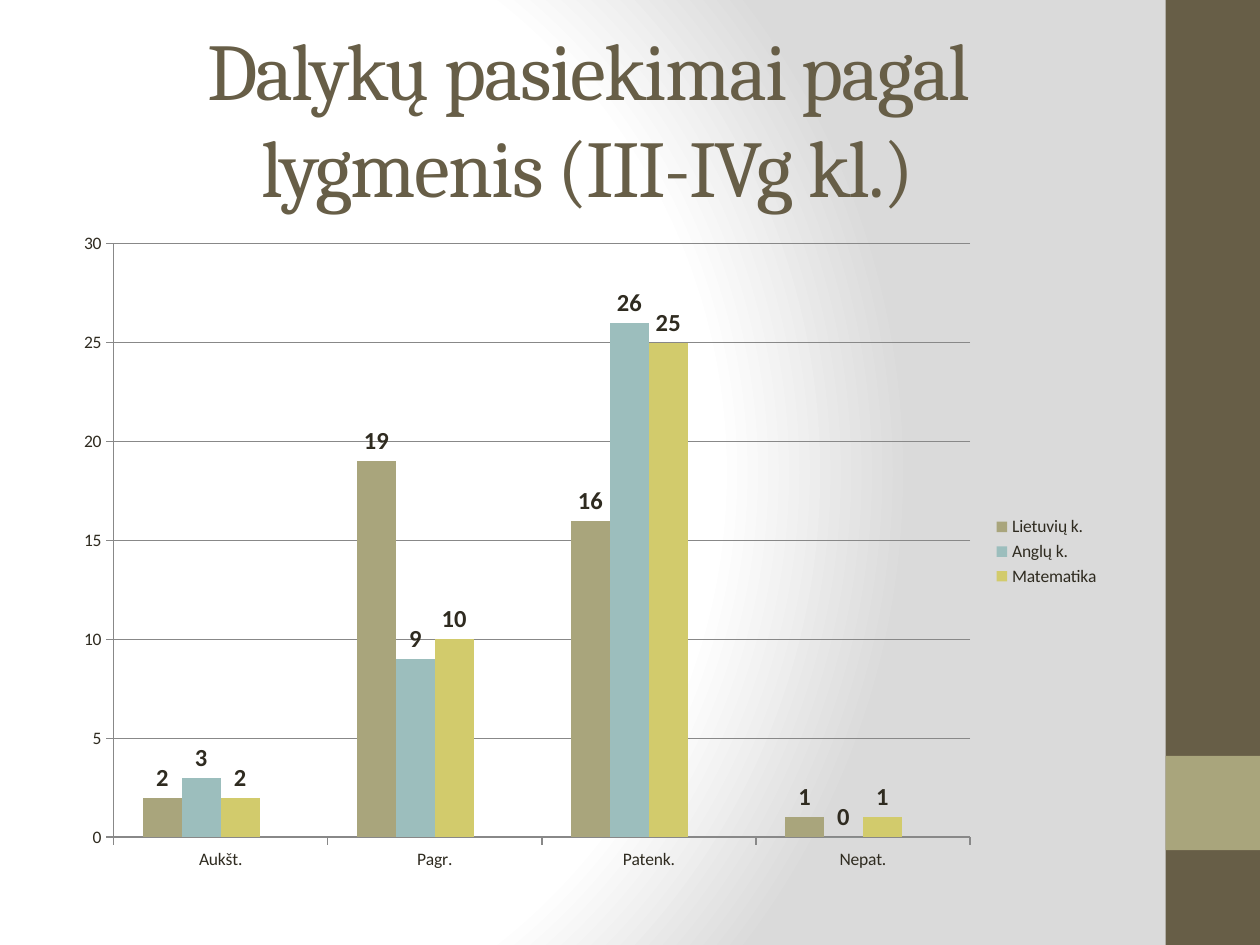
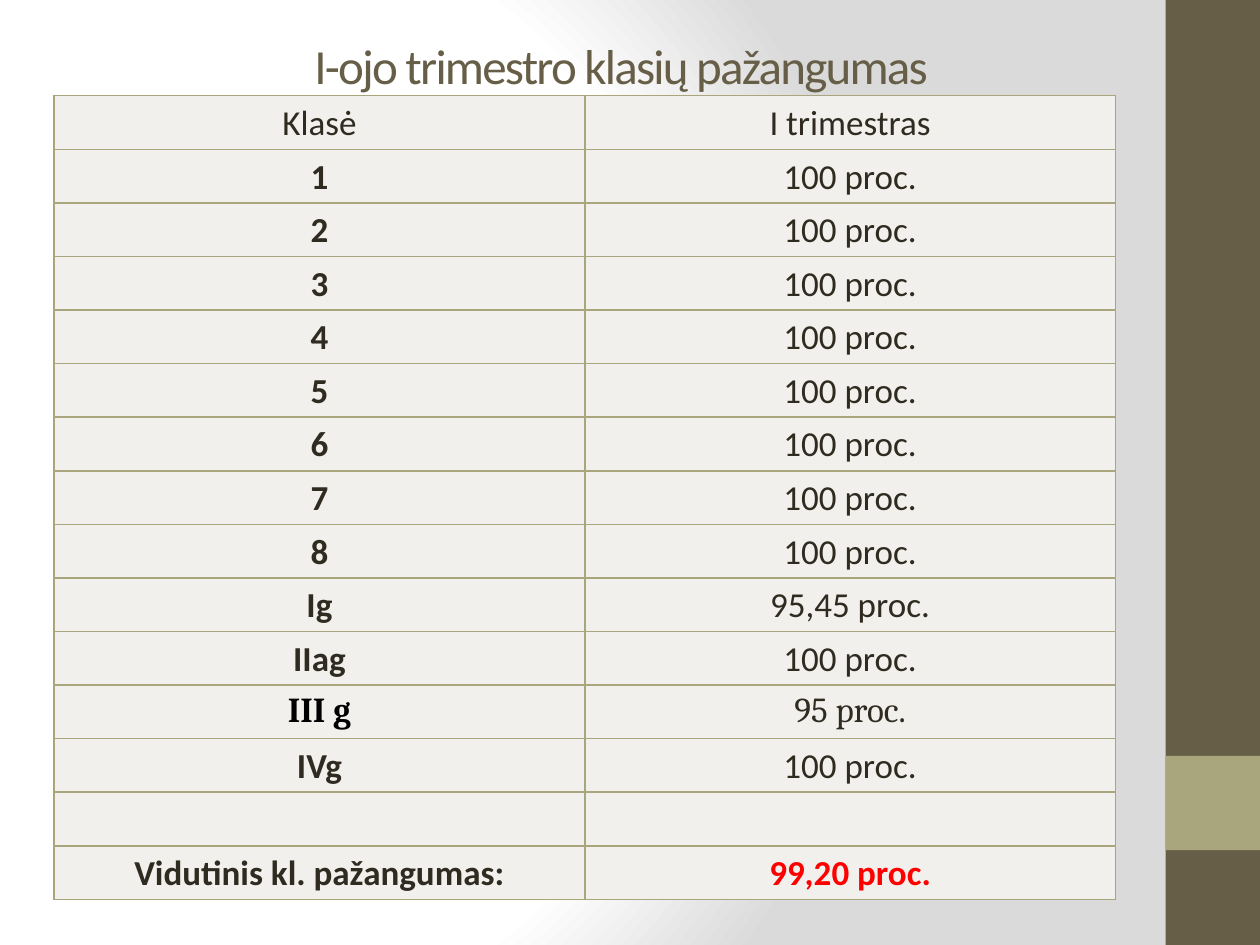
from dataclasses import dataclass

from pptx import Presentation
from pptx.chart.data import CategoryChartData
from pptx.dml.color import RGBColor
from pptx.enum.chart import XL_CHART_TYPE, XL_LABEL_POSITION, XL_LEGEND_POSITION, XL_TICK_MARK
from pptx.enum.shapes import MSO_SHAPE
from pptx.enum.text import MSO_ANCHOR, MSO_AUTO_SIZE, PP_ALIGN
from pptx.oxml import parse_xml
from pptx.oxml.ns import nsdecls, qn
from pptx.slide import Slide, SlideMaster
from pptx.table import _Cell
from pptx.util import Cm, Pt

COLUMNS = XL_CHART_TYPE.COLUMN_CLUSTERED
LABEL_ABOVE = XL_LABEL_POSITION.OUTSIDE_END
LEGEND_RIGHT = XL_LEGEND_POSITION.RIGHT
TICK_OUTSIDE = XL_TICK_MARK.OUTSIDE
RECTANGLE = MSO_SHAPE.RECTANGLE
MIDDLE = MSO_ANCHOR.MIDDLE
NO_AUTOFIT = MSO_AUTO_SIZE.NONE
CENTER = PP_ALIGN.CENTER

BROWN = RGBColor(0x67, 0x5E, 0x47)
OLIVE = RGBColor(0xA9, 0xA5, 0x7C)
TEAL = RGBColor(0x9C, 0xBE, 0xBD)
MUSTARD = RGBColor(0xD2, 0xCB, 0x6C)
SAGE = RGBColor(0x95, 0xA3, 0x9D)
INK = RGBColor(0x2F, 0x2B, 0x20)
BLACK = RGBColor(0x00, 0x00, 0x00)
RED = RGBColor(0xFF, 0x00, 0x00)
GRID_GREY = RGBColor(0x88, 0x88, 0x88)
CELL_FILL = RGBColor(0xF1, 0xF0, 0xEC)

SANS = "Calibri"
SERIF = "Cambria"
TITLE_ONLY = 5


@dataclass
class Box:
    left: float
    top: float
    width: float
    height: float

    def lengths(self) -> tuple[Cm, Cm, Cm, Cm]:
        return Cm(self.left), Cm(self.top), Cm(self.width), Cm(self.height)


@dataclass
class Band:
    box: Box
    color: RGBColor


@dataclass
class Subject:
    name: str
    values: list[int | None]
    color: RGBColor


@dataclass
class CellText:
    text: str
    bold: bool = False
    font: str = SANS
    color: RGBColor = INK


BANDS = [
    Band(Box(23.5, 0, 1.9, 19.05), BROWN),
    Band(Box(23.5, 15.24, 1.9, 1.9), OLIVE),
]

LEVELS = ["Aukšt.", "Pagr.", "Patenk.", "Nepat."]
SUBJECTS = [
    Subject("Lietuvių k.", [2, 19, 16, 1], OLIVE),
    Subject("Anglų k.", [3, 9, 26, 0], TEAL),
    Subject("Matematika", [2, 10, 25, 1], MUSTARD),
    Subject("Series 4", [None] * 4, SAGE),  # keeps the free slot in each group
]
UNLISTED_SUBJECT = 3

FULL = CellText("100 proc.")
PROGRESS = [
    (CellText("Klasė"), CellText("I trimestras")),
    *((CellText(str(number), bold=True), FULL) for number in range(1, 9)),
    (CellText("Ig", bold=True), CellText("95,45 proc.")),
    (CellText("IIag", bold=True), FULL),
    (CellText("III g", True, SERIF, BLACK), CellText("95 proc.", font=SERIF)),
    (CellText("IVg", bold=True), FULL),
    (CellText(""), CellText("")),
    (CellText("Vidutinis kl. pažangumas:", bold=True),
     CellText("99,20 proc.", bold=True, color=RED)),
]


# Shared look
def set_background(master: SlideMaster) -> None:
    master.background.fill.solid()
    solid = master.element.find(".//" + qn("p:bgPr")).find(qn("a:solidFill"))
    stops = "".join(
        f'<a:gs pos="{position}000"><a:srgbClr val="{color}"/></a:gs>'
        for position, color in ((0, "FFFFFF"), (75, "FFFFFF"), (100, "DADADA"))
    )
    gradient = parse_xml(
        f'<a:gradFill {nsdecls("a")} rotWithShape="1"><a:gsLst>{stops}</a:gsLst>'
        '<a:path path="circle"><a:fillToRect l="20000" t="50000" r="100000" b="50000"/>'
        "</a:path></a:gradFill>"
    )
    solid.getparent().replace(solid, gradient)


def add_page(deck: Presentation, title: str, box: Box, font: str, size: int) -> Slide:
    page = deck.slides.add_slide(deck.slide_layouts[TITLE_ONLY])
    for band in BANDS:
        shape = page.shapes.add_shape(RECTANGLE, *band.box.lengths())
        shape.shadow.inherit = False
        shape.fill.solid()
        shape.fill.fore_color.rgb = band.color
        shape.line.fill.background()

    heading = page.shapes.title
    heading.left, heading.top, heading.width, heading.height = box.lengths()
    frame = heading.text_frame
    frame.auto_size = NO_AUTOFIT
    frame.word_wrap = True
    frame.vertical_anchor = MIDDLE
    para = frame.paragraphs[0]
    para.alignment = CENTER
    span = para.add_run()
    span.text = title
    span.font.name = font
    span.font.size = Pt(size)
    span.font.color.rgb = BROWN
    span.font._element.set("spc", "-100")
    return page


# Chart of results by level
def add_results_chart(page: Slide, box: Box) -> None:
    data = CategoryChartData()
    data.categories = LEVELS
    for subject in SUBJECTS:
        data.add_series(subject.name, subject.values)
    chart = page.shapes.add_chart(COLUMNS, *box.lengths(), data).chart
    chart.has_title = False
    chart.font.name = SANS
    chart.font.size = Pt(10)
    chart.font.color.rgb = INK

    plot = chart.plots[0]
    plot.gap_width = 150
    plot.overlap = 0
    plot.vary_by_categories = False
    for series, subject in zip(plot.series, SUBJECTS):
        series.format.fill.solid()
        series.format.fill.fore_color.rgb = subject.color
        series.invert_if_negative = False
        labels = series.data_labels
        labels.show_value = True
        labels.position = LABEL_ABOVE
        labels.font.size = Pt(14)
        labels.font.bold = True
        labels.font.name = SANS
        labels.font.color.rgb = INK

    chart.value_axis.has_major_gridlines = True
    chart.value_axis.maximum_scale = 30
    chart.value_axis.major_unit = 5
    for axis in (chart.category_axis, chart.value_axis):
        axis.major_tick_mark = TICK_OUTSIDE
        axis.format.line.color.rgb = GRID_GREY
        axis.format.line.width = Pt(0.75)
    grid_line = chart.value_axis.major_gridlines.format.line
    grid_line.color.rgb = GRID_GREY
    grid_line.width = Pt(0.75)

    chart.has_legend = True
    chart.legend.position = LEGEND_RIGHT
    chart.legend.include_in_layout = False
    entry = parse_xml(
        f'<c:legendEntry {nsdecls("c")}><c:idx val="{UNLISTED_SUBJECT}"/>'
        '<c:delete val="1"/></c:legendEntry>'
    )
    chart.legend._element.find(qn("c:legendPos")).addnext(entry)


# Table of progress by class
def draw_borders(cell: _Cell) -> None:
    properties = cell._tc.get_or_add_tcPr()
    for index, side in enumerate(("lnL", "lnR", "lnT", "lnB")):
        properties.insert(index, parse_xml(
            f'<a:{side} {nsdecls("a")} w="{Pt(1)}"><a:solidFill>'
            f'<a:srgbClr val="{OLIVE}"/></a:solidFill></a:{side}>'
        ))


def fill_cell(cell: _Cell, content: CellText) -> None:
    cell.fill.solid()
    cell.fill.fore_color.rgb = CELL_FILL
    draw_borders(cell)
    cell.margin_left = cell.margin_right = Cm(0.18)
    cell.margin_top = cell.margin_bottom = Cm(0)
    if not content.text:
        return
    para = cell.text_frame.paragraphs[0]
    para.alignment = CENTER
    para.line_spacing = 1.15
    span = para.add_run()
    span.text = content.text
    span.font.name = content.font
    span.font.size = Pt(20)
    span.font.bold = content.bold
    span.font.color.rgb = content.color


def add_progress_table(page: Slide, box: Box) -> None:
    table = page.shapes.add_table(len(PROGRESS), 2, *box.lengths()).table
    table.first_row = False
    table.horz_banding = False
    for row, contents in zip(table.rows, PROGRESS):
        for cell, content in zip(row.cells, contents):
            fill_cell(cell, content)


def main() -> None:
    deck = Presentation()
    deck.slide_width, deck.slide_height = Cm(25.4), Cm(19.05)
    set_background(deck.slide_master)

    page = add_page(deck, "Dalykų pasiekimai pagal lygmenis (III-IVg kl.)",
                    Box(1.27, 0.76, 21.16, 3.18), SERIF, 46)
    add_results_chart(page, Box(1.27, 4.45, 21.16, 13.34))

    page = add_page(deck, "I-ojo trimestro klasių pažangumas",
                    Box(1.09, 0.53, 22.86, 1.55), SANS, 28)
    add_progress_table(page, Box(1.09, 1.93, 21.4, 16.2))

    deck.save("out.pptx")


if __name__ == "__main__":
    main()
